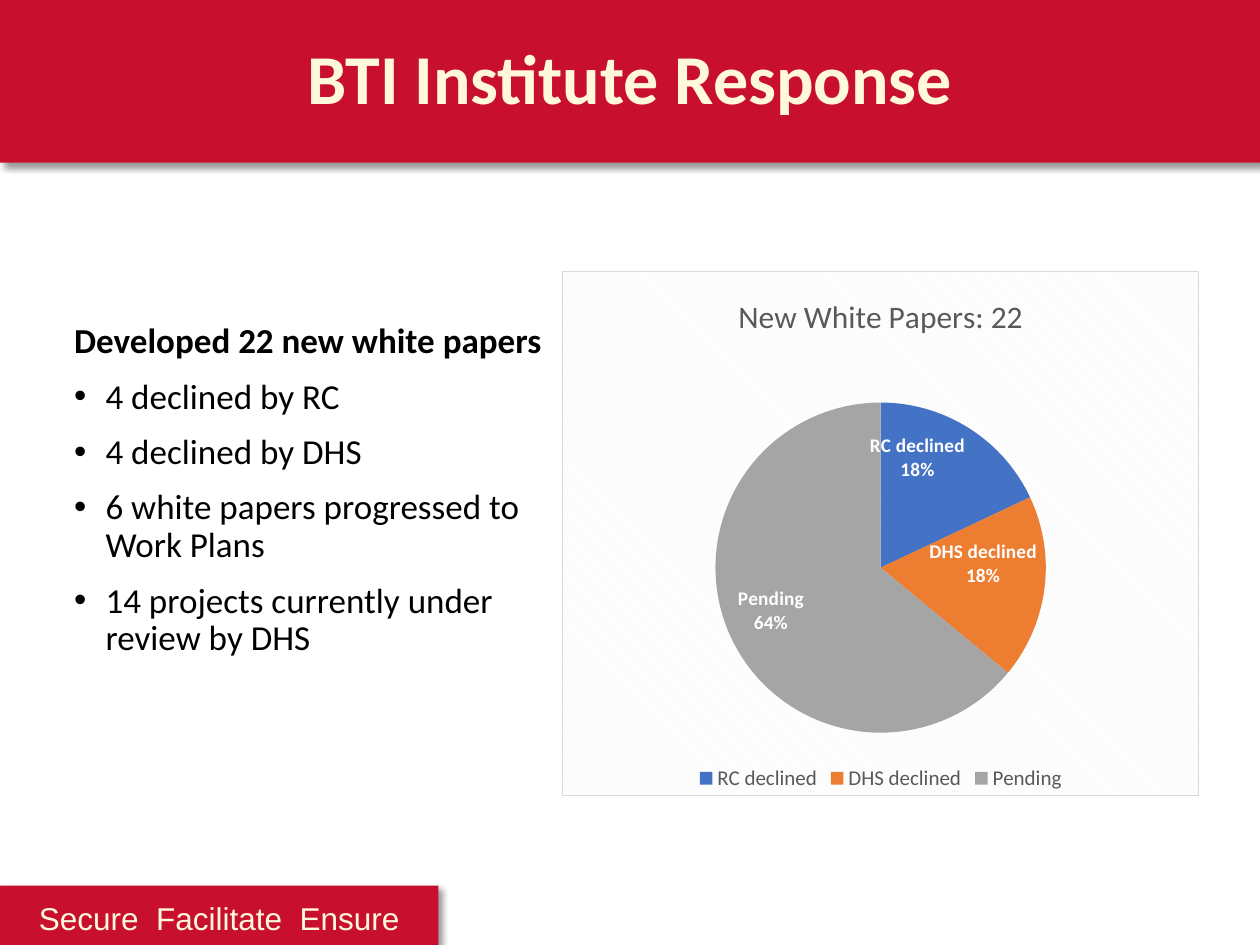
from lxml import etree
from pptx import Presentation
from pptx import util as u
from pptx.chart.data import CategoryChartData
from pptx.dml.color import RGBColor
from pptx.enum import chart as ch, shapes, text
from pptx.oxml import parse_xml
from pptx.oxml.ns import nsdecls, qn

COLORS = {
    "red": "C8102E", "cream": "FFF9D9", "black": "000000", "white": "FFFFFF",
    "grey": "595959", "border": "D9D9D9", "hatch": "F2F2F2",
    "RC declined": "4472C4", "DHS declined": "ED7D31", "Pending": "A5A5A5",
}

prs = Presentation()
prs.slide_width, prs.slide_height = u.Inches(10), u.Inches(7.5)
s = prs.slides.add_slide(prs.slide_layouts[6])


def area(x, y, w, h):
    """Turn percentages of the slide into left, top, width, height."""
    W, H = prs.slide_width, prs.slide_height
    return [round(v * full / 100) for v, full in ((x, W), (y, H), (w, W), (h, H))]


def style(font, size, color, bold=False, name="Calibri"):
    font.name, font.size, font.bold = name, u.Pt(size), bold
    font.color.rgb = RGBColor.from_string(COLORS[color])


# Red bands with a soft shadow
header, footer = (0, 0, 100, 17.2), (0, 93.73, 34.8, 6.27)
for band in (header, footer):
    sp = s.shapes.add_shape(shapes.MSO_SHAPE.RECTANGLE, *area(*band))
    sp.fill.solid()
    sp.fill.fore_color.rgb = RGBColor.from_string(COLORS["red"])
    sp.line.fill.background()
    sp.shadow.inherit = False
    effects = sp._element.spPr.find(qn("a:effectLst"))
    effects.append(parse_xml(
        f'<a:outerShdw {nsdecls("a")} blurRad="{u.Pt(4)}" dist="{u.Pt(3)}" '
        f'dir="2700000" algn="tl" rotWithShape="0"><a:srgbClr val="{COLORS["black"]}">'
        '<a:alpha val="40000"/></a:srgbClr></a:outerShdw>'))

# Title and motto
for place, words, size, bold, name, spacing, anchor in (
    ((6.9, 2.67, 86.2, 11.87), "BTI Institute Response", 40, True, "Calibri", 0.9,
     text.MSO_ANCHOR.MIDDLE),
    (footer, "Secure  Facilitate  Ensure", 18, False, "Arial", 1.19,
     text.MSO_ANCHOR.TOP),
):
    tf = s.shapes.add_textbox(*area(*place)).text_frame
    tf.word_wrap, tf.vertical_anchor = True, anchor
    p = tf.paragraphs[0]
    p.alignment, p.line_spacing = text.PP_ALIGN.CENTER, spacing
    r = p.add_run()
    r.text = words
    style(r.font, size, "cream", bold, name)

# Heading and bullets
lines = [
    "Developed 22 new white papers",
    "4 declined by RC",
    "4 declined by DHS",
    "6 white papers progressed to Work Plans",
    "14 projects currently under review by DHS",
]
tf = s.shapes.add_textbox(*area(4.9, 33.6, 39.7, 45.6)).text_frame
tf.word_wrap = True
for i, line in enumerate(lines):
    p = tf.paragraphs[0] if i == 0 else tf.add_paragraph()
    if i:
        pPr = p._p.get_or_add_pPr()
        pPr.set("marL", str(u.Inches(0.25)))
        pPr.set("indent", str(-u.Inches(0.25)))
        etree.SubElement(pPr, qn("a:buFont"), typeface="Arial")
        etree.SubElement(pPr, qn("a:buChar"), char="•")
        p.space_before = u.Pt(10)
    p.line_spacing = 0.9
    r = p.add_run()
    r.text = line
    style(r.font, 20, "black", bold=i == 0)

# Pie chart
shares = {"RC declined": 18, "DHS declined": 18, "Pending": 64}
data = CategoryChartData()
data.categories = list(shares)
data.add_series("Series 1", list(shares.values()))
chart = s.shapes.add_chart(ch.XL_CHART_TYPE.PIE, *area(44.6, 28.67, 50.6, 55.6),
                           data).chart
style(chart.font, 10, "black")
chart.has_title = True
r = chart.chart_title.text_frame.paragraphs[0].add_run()
r.text = "New White Papers: 22"
style(r.font, 18, "grey")
chart.has_legend = True
chart.legend.position = ch.XL_LEGEND_POSITION.BOTTOM
chart.legend.include_in_layout = False
style(chart.legend.font, 12, "grey")

# Slices and their labels
plot = chart.plots[0]
plot.vary_by_categories = True
for i, category in enumerate(shares):
    fill = plot.series[0].points[i].format.fill
    fill.solid()
    fill.fore_color.rgb = RGBColor.from_string(COLORS[category])
labels = plot.series[0].data_labels
labels.show_value = False
labels.show_category_name = labels.show_percentage = True
labels.position = ch.XL_LABEL_POSITION.INSIDE_END
style(labels.font, 11, "white", bold=True)
separator = etree.Element(qn("c:separator"))
separator.text = "\n"
labels._element.find(qn("c:showBubbleSize")).addnext(separator)

# Pie placement inside the chart
plot_area = chart._chartSpace.chart.plotArea
for old in plot_area.findall(qn("c:layout")):
    plot_area.remove(old)
layout = etree.Element(qn("c:layout"))
manual = etree.SubElement(layout, qn("c:manualLayout"))
for tag, val in (("layoutTarget", "inner"), ("xMode", "edge"), ("yMode", "edge"),
                 ("x", "0.24"), ("y", "0.25"), ("w", "0.52"), ("h", "0.63")):
    etree.SubElement(manual, qn(f"c:{tag}"), val=val)
plot_area.insert(0, layout)

# Hatched chart background with a thin border
chart._chartSpace.chart.addnext(parse_xml(
    f'<c:spPr {nsdecls("c", "a")}><a:pattFill prst="dkDnDiag">'
    f'<a:fgClr><a:srgbClr val="{COLORS["hatch"]}"/></a:fgClr>'
    f'<a:bgClr><a:srgbClr val="{COLORS["white"]}"/></a:bgClr></a:pattFill>'
    f'<a:ln w="{u.Pt(0.75)}"><a:solidFill><a:srgbClr val="{COLORS["border"]}"/>'
    '</a:solidFill></a:ln></c:spPr>'))

prs.save("out.pptx")
